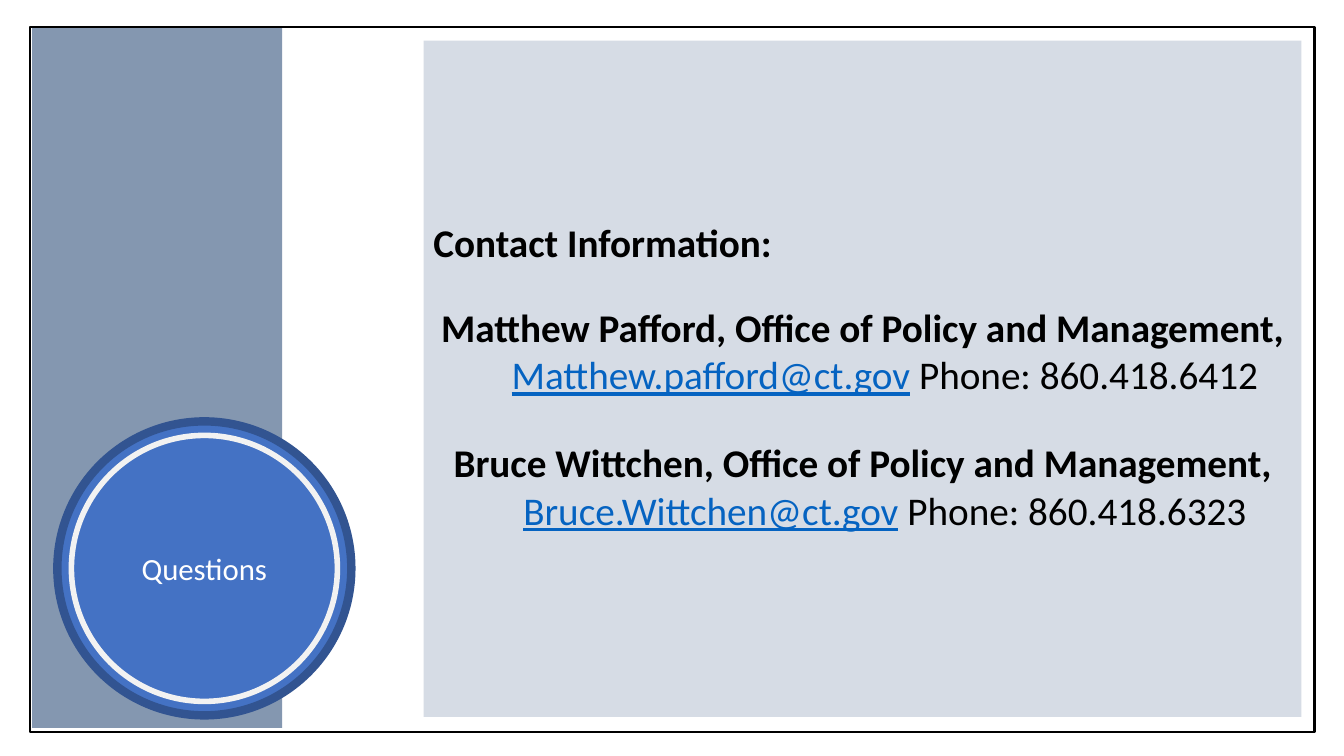
"""Build the contact information slide."""
from pptx import Presentation
from pptx.dml.color import RGBColor
from pptx.enum.shapes import MSO_SHAPE
from pptx.enum.text import MSO_ANCHOR, PP_ALIGN
from pptx.util import Pt

RECTANGLE, OVAL = MSO_SHAPE.RECTANGLE, MSO_SHAPE.OVAL
LEFT, CENTER = PP_ALIGN.LEFT, PP_ALIGN.CENTER
MIDDLE = MSO_ANCHOR.MIDDLE

COLORS = {
    "band": "8497B0", "panel": "D6DCE5", "disc": "4472C4", "rim": "325491",
    "ring": "F2F2F2", "text": "000000", "link": "0563C1", "light": "FFFFFF",
}
CONTACTS = [
    ("Matthew Pafford, Office of Policy and Management,",
     "Matthew.pafford@ct.gov", " Phone: 860.418.6412", 30),
    ("Bruce Wittchen, Office of Policy and Management,",
     "Bruce.Wittchen@ct.gov", " Phone: 860.418.6323", 33),
]


class SlideBuilder:
    def __init__(self, slide):
        self.slide = slide
        self.font = {"name": "Calibri", "size": Pt(28)}

    def color(self, name):
        return RGBColor.from_string(COLORS[name])

    def shape(self, kind, left, top, width, height, fill=None, line=None, weight=0):
        shape = self.slide.shapes.add_shape(
            kind, Pt(left), Pt(top), Pt(width), Pt(height))
        shape.shadow.inherit = False
        if fill:
            shape.fill.solid()
            shape.fill.fore_color.rgb = self.color(fill)
        else:
            shape.fill.background()
        if line:
            shape.line.color.rgb = self.color(line)
            shape.line.width = Pt(weight)
        else:
            shape.line.fill.background()
        shape.text_frame.word_wrap = True
        shape.text_frame.vertical_anchor = MIDDLE
        return shape

    def circle(self, center, diameter, **style):
        left, top = (value - diameter / 2 for value in center)
        return self.shape(OVAL, left, top, diameter, diameter, **style)

    def paragraph(self, paragraph, runs, indent=0, **layout):
        if indent:
            paragraph._p.get_or_add_pPr().set("marL", str(Pt(indent)))
        for name, value in layout.items():
            setattr(paragraph, name, value)
        for text, color, style in runs:
            run = paragraph.add_run()
            run.text = text
            run.font.color.rgb = self.color(color)
            for name, value in {**self.font, **style}.items():
                setattr(run.font, name, value)


def main():
    presentation = Presentation()
    presentation.slide_width, presentation.slide_height = Pt(960), Pt(540)
    builder = SlideBuilder(presentation.slides.add_slide(presentation.slide_layouts[6]))

    builder.shape(RECTANGLE, 23, 19.5, 178.5, 500.5, fill="band")
    builder.shape(RECTANGLE, 21.5, 19.5, 917.5, 503.5, line="text", weight=1.5)

    frame = builder.shape(RECTANGLE, 302.5, 29, 627, 483, fill="panel").text_frame
    builder.paragraph(frame.paragraphs[0],
                      [("Contact Information:", "text", {"bold": True})],
                      alignment=LEFT, line_spacing=0.9)
    for heading, address, phone, gap in CONTACTS:
        builder.paragraph(frame.add_paragraph(), [(heading, "text", {"bold": True})],
                          alignment=CENTER, line_spacing=0.9, space_before=Pt(gap))
        builder.paragraph(frame.add_paragraph(),
                          [(address, "link", {"underline": True}), (phone, "text", {})],
                          indent=32, alignment=CENTER)

    center = (146, 406)
    disc = builder.circle(center, 210, fill="disc", line="rim", weight=6)
    builder.paragraph(disc.text_frame.paragraphs[0],
                      [("Questions", "light", {"size": Pt(22)})], alignment=CENTER)
    builder.circle(center, 190, line="ring", weight=4)

    presentation.save("out.pptx")


if __name__ == "__main__":
    main()
